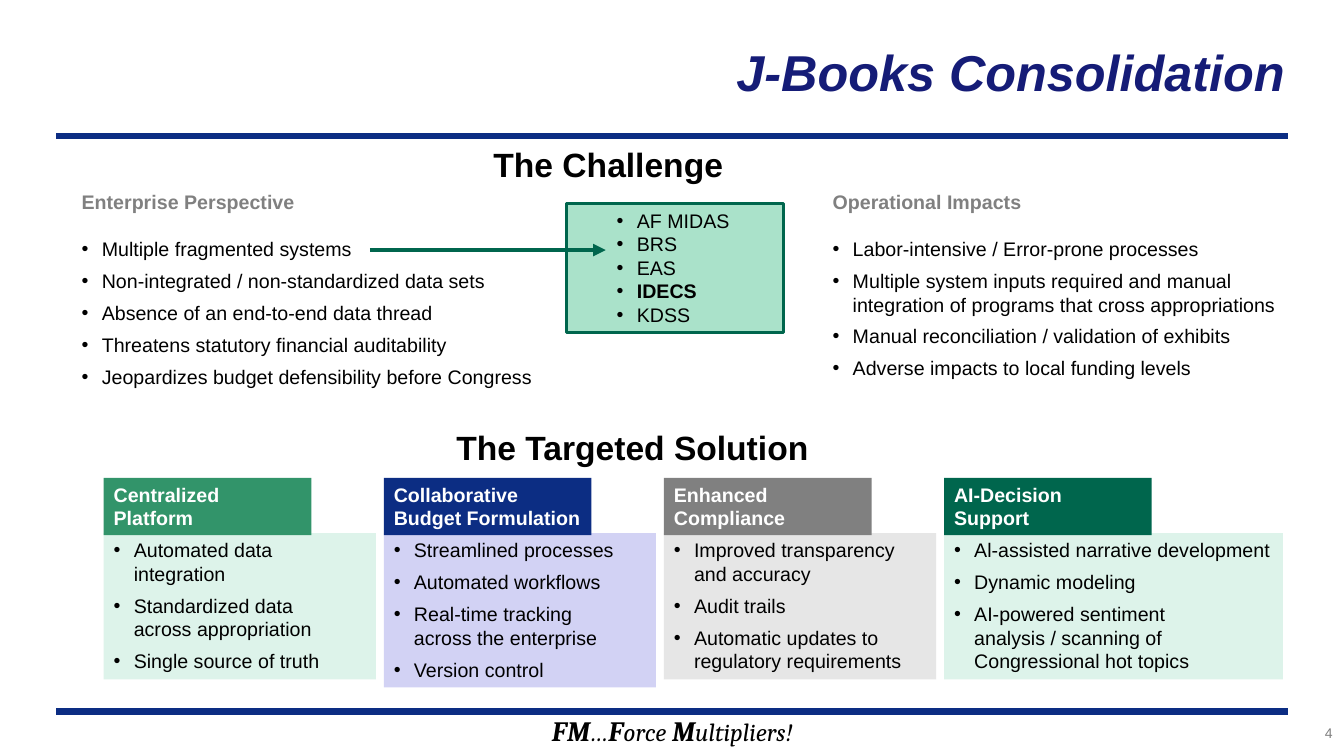
"""Build the J-Books Consolidation slide."""
from lxml.etree import SubElement
from pptx import Presentation
from pptx.dml.color import RGBColor
from pptx.enum.shapes import MSO_CONNECTOR, MSO_SHAPE
from pptx.enum.text import MSO_ANCHOR, MSO_AUTO_SIZE, PP_ALIGN
from pptx.oxml.ns import qn
from pptx.util import Pt

NAVY, GREEN, GRAY, BLACK, WHITE = "0C2D83", "00664D", "808080", "000000", "FFFFFF"

TITLE = "J-Books Consolidation"
HEADINGS = [("The Challenge", 194.4, 99.4), ("The Targeted Solution", 211.7, 301.7)]
LISTS = [
    ("Enterprise Perspective", (51.1, 131.8, 480, 150.5), [
        "Multiple fragmented systems",
        "Non-integrated / non-standardized data sets",
        "Absence of an end-to-end data thread",
        "Threatens statutory financial auditability",
        "Jeopardizes budget defensibility before Congress"]),
    ("Operational Impacts", (587.5, 131.8, 347, 144), [
        "Labor-intensive / Error-prone processes",
        "Multiple system inputs required and manual integration of programs "
        "that cross appropriations",
        "Manual reconciliation / validation of exhibits",
        "Adverse impacts to local funding levels"]),
]
SYSTEMS = ["AF MIDAS", "BRS", "EAS", "IDECS", "KDSS"]
KEY_SYSTEM = "IDECS"
CARDS = [
    ("Centralized\vPlatform", "32946A", "DDF3EA", 194.4, 104.4, [
        "Automated data integration",
        "Standardized data\vacross appropriation",
        "Single source of truth"]),
    ("Collaborative\vBudget Formulation", NAVY, "D2D2F4", 194.4, 110.2, [
        "Streamlined processes",
        "Automated workflows",
        "Real-time tracking\vacross the enterprise",
        "Version control"]),
    ("Enhanced\vCompliance", GRAY, "E6E6E6", 194.4, 104.4, [
        "Improved transparency and accuracy",
        "Audit trails",
        "Automatic updates to regulatory requirements"]),
    ("AI-Decision\vSupport", GREEN, "DDF3EA", 242, 104.4, [
        "Al-assisted narrative development",
        "Dynamic modeling",
        "AI-powered sentiment\vanalysis / scanning of\vCongressional hot topics"]),
]
MOTTO = [("FM", True), ("…", False), ("F", True), ("orce ", False),
         ("M", True), ("ultipliers!", False)]
CARD_LEFT, CARD_STEP, TAB_TOP, BODY_TOP = 74.1, 200.1, 341.3, 380.9


def color(value):
    return RGBColor.from_string(value)


def place(s, left, top, width, height):
    s.left, s.top, s.width, s.height = Pt(left), Pt(top), Pt(width), Pt(height)


def add_run(p, text, size=14, fill=BLACK, bold=False, italic=False, font="Arial"):
    for i, line in enumerate(text.split("\v")):
        if i:
            p.add_line_break()
        r = p.add_run()
        r.text = line
        f = r.font
        f.name, f.size, f.bold, f.italic = font, Pt(size), bold, italic
        f.color.rgb = color(fill)


def next_paragraph(tf):
    first = tf.paragraphs[0]
    p = tf.add_paragraph() if first.runs else first
    p.alignment = PP_ALIGN.LEFT
    p.space_before = Pt(0)
    return p


def add_bullet(tf, text, margin=14.4, after=6, bold=False):
    p = next_paragraph(tf)
    p.space_after = Pt(after)
    pPr = p._p.get_or_add_pPr()
    pPr.set("marL", str(Pt(margin)))
    pPr.set("indent", str(Pt(-14.4)))
    SubElement(pPr, qn("a:buFont"), typeface="Arial")
    SubElement(pPr, qn("a:buChar"), char="•")
    add_run(p, text, bold=bold)
    return p


def setup_frame(s, anchor=MSO_ANCHOR.TOP):
    tf = s.text_frame
    tf.word_wrap = True
    tf.auto_size = MSO_AUTO_SIZE.NONE
    tf.vertical_anchor = anchor
    return tf


def add_text(slide, box, align):
    s = slide.shapes.add_textbox(*map(Pt, box))
    p = setup_frame(s).paragraphs[0]
    p.alignment = align
    return p


def add_box(slide, box, fill, line=None):
    s = slide.shapes.add_shape(MSO_SHAPE.RECTANGLE, *map(Pt, box))
    s.shadow.inherit = False
    s.fill.solid()
    s.fill.fore_color.rgb = color(fill)
    if line:
        s.line.color.rgb = color(line)
        s.line.width = Pt(2.25)
    else:
        s.line.fill.background()
    return setup_frame(s)


def add_line(slide, x1, x2, y, fill, width, arrow=False):
    s = slide.shapes.add_connector(MSO_CONNECTOR.STRAIGHT, Pt(x1), Pt(y), Pt(x2), Pt(y))
    s.line.color.rgb = color(fill)
    s.line.width = Pt(width)
    if arrow:
        SubElement(s.line._get_or_add_ln(), qn("a:tailEnd"), type="triangle")
    SubElement(s._element.spPr, qn("a:effectLst"))


def main():
    prs = Presentation()
    prs.slide_width, prs.slide_height = Pt(960), Pt(540)
    slide = prs.slides.add_slide(prs.slide_layouts[3])
    title, *bodies = slide.placeholders

    place(title, 175, 5.8, 750.2, 90)
    p = setup_frame(title, MSO_ANCHOR.MIDDLE).paragraphs[0]
    p.alignment = PP_ALIGN.RIGHT
    add_run(p, TITLE, 36, "151C77", True, True)

    for body, (heading, box, items) in zip(bodies, LISTS):
        place(body, *box)
        tf = setup_frame(body)
        p = next_paragraph(tf)
        pPr = p._p.get_or_add_pPr()
        pPr.set("marL", "0")
        pPr.set("indent", "0")
        SubElement(pPr, qn("a:buNone"))
        add_run(p, heading, fill=GRAY, bold=True)
        bullets = [add_bullet(tf, item) for item in items]
        bullets[0].space_before = Pt(17)

    for y in (97.2, 508.3):
        add_line(slide, 40.3, 920.2, y, NAVY, 4.5)
    p = add_text(slide, (270, 506.2, 420.5, 31.7), PP_ALIGN.CENTER)
    for text, bold in MOTTO:
        add_run(p, text, 20 if bold else 18, bold=bold, italic=True, font="Cambria")
    p = add_text(slide, (838.8, 514.1, 120.2, 23.8), PP_ALIGN.RIGHT)
    add_run(p, "4", 10, "7F7F7F")

    for text, left, top in HEADINGS:
        p = add_text(slide, (left, top, 480.2, 36), PP_ALIGN.CENTER)
        add_run(p, text, 24, bold=True)

    for i, (name, dark, light, width, height, items) in enumerate(CARDS):
        left = CARD_LEFT + i * CARD_STEP
        tf = add_box(slide, (left, BODY_TOP, width, height), light)
        for item in items:
            add_bullet(tf, item)
        tf = add_box(slide, (left, TAB_TOP, 148.3, 41), dark)
        tf.margin_right = 0
        add_run(next_paragraph(tf), name, fill=WHITE, bold=True)

    tf = add_box(slide, (404.6, 145.4, 154.8, 92.2), "AAE2CA", GREEN)
    for system in SYSTEMS:
        add_bullet(tf, system, 43.2, 0, system == KEY_SYSTEM)
    add_line(slide, 264.2, 432.7, 178.6, GREEN, 3, arrow=True)

    prs.save("out.pptx")


if __name__ == "__main__":
    main()
